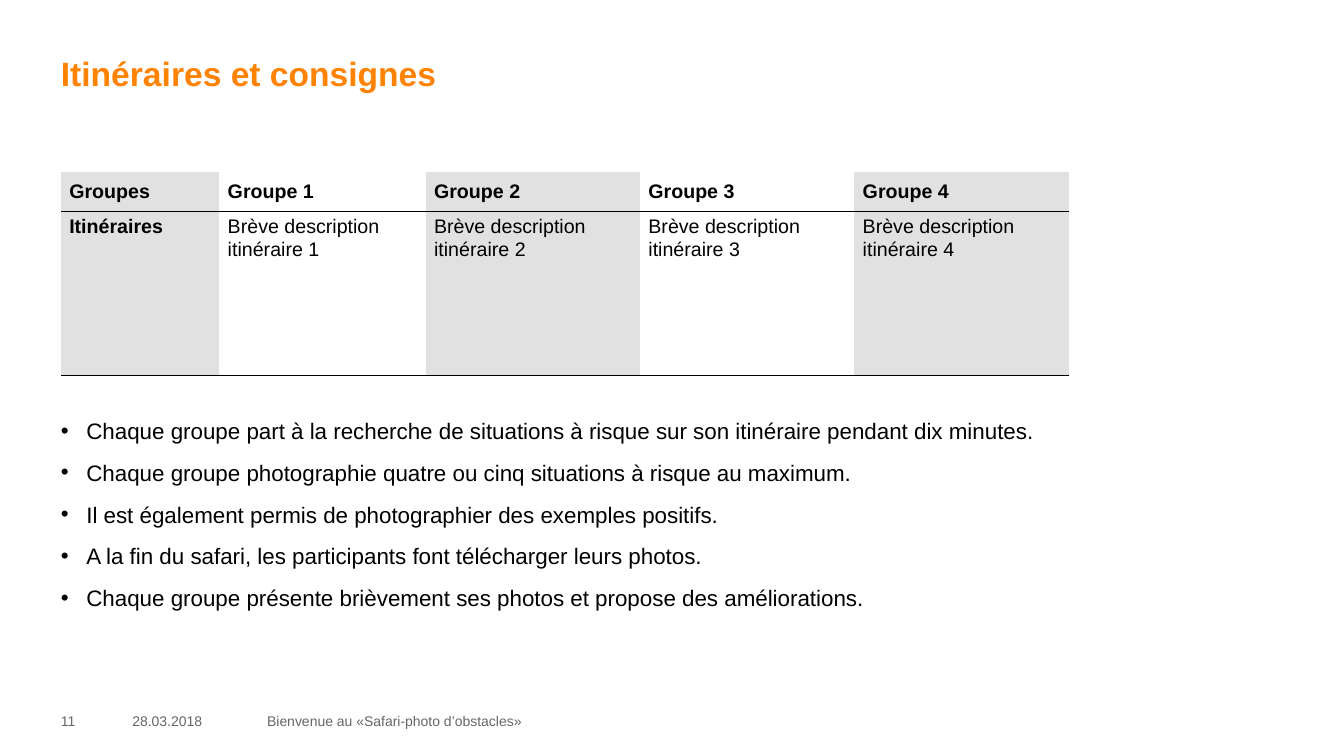
from dataclasses import dataclass

import pptx
import pptx.dml.color
import pptx.enum.text
import pptx.oxml
import pptx.oxml.ns
import pptx.util
from pptx.enum.text import MSO_ANCHOR, MSO_AUTO_SIZE, PP_ALIGN


@dataclass(frozen=True)
class Theme:
    font: str = "Arial"
    accent: str = "FF8200"
    ink: str = "000000"
    muted: str = "666666"
    band: str = "E1E1E1"
    title_size: float = 24
    body_size: float = 16
    table_size: float = 14
    footer_size: float = 10
    rule_width: float = 0.67


@dataclass(frozen=True)
class Area:
    left: float
    top: float
    width: float
    height: float


@dataclass(frozen=True)
class FooterItem:
    text: str
    left: float
    width: float


THEME = Theme()
MARGIN = 43.5
CONTENT_WIDTH = 720

TITLE_AREA = Area(MARGIN, 37.5, 873.5, 67.5)
TABLE_AREA = Area(MARGIN, 122.7, CONTENT_WIDTH, 145.5)
LIST_AREA = Area(MARGIN, 298, CONTENT_WIDTH, 187)
FOOTER_TOP, FOOTER_HEIGHT = 507.6, 14.4

COLUMN_WIDTHS = [113.2, 147.4, 153.1, 153.1, 153.2]
ROW_HEIGHTS = [28.1, 117.4]
GROUPS = range(1, 5)
TABLE_ROWS = [
    ["Groupes"] + [f"Groupe {number}" for number in GROUPS],
    ["Itinéraires"] + [f"Brève description itinéraire {number}" for number in GROUPS],
]

INSTRUCTIONS = [
    "Chaque groupe part à la recherche de situations à risque sur son itinéraire pendant dix minutes.",
    "Chaque groupe photographie quatre ou cinq situations à risque au maximum.",
    "Il est également permis de photographier des exemples positifs.",
    "A la fin du safari, les participants font télécharger leurs photos.",
    "Chaque groupe présente brièvement ses photos et propose des améliorations.",
]
LIST_INDENT = 18.2
LIST_GAP = 10.6

FOOTER_ITEMS = [
    FooterItem("11", MARGIN, 39.6),
    FooterItem("28.03.2018", 94.5, 85),
    FooterItem("Bienvenue au «Safari-photo d’obstacles»", 190.8, 617.8),
]


def place(shape, area: Area) -> None:
    shape.left, shape.top = pptx.util.Pt(area.left), pptx.util.Pt(area.top)
    shape.width, shape.height = pptx.util.Pt(area.width), pptx.util.Pt(area.height)


def prepare_frame(frame, anchor=MSO_ANCHOR.TOP) -> None:
    frame.word_wrap = True
    frame.auto_size = MSO_AUTO_SIZE.NONE
    frame.vertical_anchor = anchor
    frame.margin_left = frame.margin_right = 0
    frame.margin_top = frame.margin_bottom = 0


def write(para, text: str, *, size: float, color: str = THEME.ink, bold: bool = False) -> None:
    para.alignment = PP_ALIGN.LEFT
    span = para.add_run()
    span.text = text
    span.font.name = THEME.font
    span.font.size = pptx.util.Pt(size)
    span.font.bold = bold
    span.font.color.rgb = pptx.dml.color.RGBColor.from_string(color)


def add_text_box(page, area: Area, anchor=MSO_ANCHOR.TOP):
    box = page.shapes.add_textbox(0, 0, 0, 0)
    place(box, area)
    prepare_frame(box.text_frame, anchor)
    return box.text_frame


def add_bullet(para) -> None:
    properties = para._p.get_or_add_pPr()
    indent = int(pptx.util.Pt(LIST_INDENT))
    properties.set("marL", str(indent))
    properties.set("indent", str(-indent))
    namespace = pptx.oxml.ns.nsdecls("a")
    for xml in (
        f'<a:buFont {namespace} typeface="{THEME.font}"/>',
        f'<a:buChar {namespace} char="•"/>',
    ):
        properties.append(pptx.oxml.parse_xml(xml))


def set_borders(cell) -> None:
    """Rule the bottom and inner horizontal edges; clear the others."""
    properties = cell._tc.get_or_add_tcPr()
    is_header = cell._tc.row_idx == 0
    ruled_sides = ("lnB",) if is_header else ("lnT", "lnB")
    rule = f'<a:solidFill><a:srgbClr val="{THEME.ink}"/></a:solidFill>'
    width = int(pptx.util.Pt(THEME.rule_width))
    for side in ("lnL", "lnR", "lnT", "lnB"):
        line = rule if side in ruled_sides else "<a:noFill/>"
        properties.append(pptx.oxml.parse_xml(
            f'<a:{side} {pptx.oxml.ns.nsdecls("a")} w="{width}">{line}</a:{side}>'))


def add_title(page) -> None:
    title = page.shapes.title
    place(title, TITLE_AREA)
    prepare_frame(title.text_frame)
    write(title.text_frame.paragraphs[0], "Itinéraires et consignes",
          size=THEME.title_size, color=THEME.accent, bold=True)


def add_group_table(page) -> None:
    frame = page.shapes.add_table(len(ROW_HEIGHTS), len(COLUMN_WIDTHS), 0, 0, 0, 0)
    place(frame, TABLE_AREA)
    table = frame.table
    table.first_row = table.horz_banding = False
    for column, width in zip(table.columns, COLUMN_WIDTHS):
        column.width = pptx.util.Pt(width)
    for row, height in zip(table.rows, ROW_HEIGHTS):
        row.height = pptx.util.Pt(height)

    for row_index, texts in enumerate(TABLE_ROWS):
        for column_index, text in enumerate(texts):
            cell = table.cell(row_index, column_index)
            is_header = row_index == 0
            cell.vertical_anchor = MSO_ANCHOR.MIDDLE if is_header else MSO_ANCHOR.TOP
            cell.margin_left = cell.margin_right = pptx.util.Pt(6)
            cell.margin_top = cell.margin_bottom = pptx.util.Pt(3.6)
            set_borders(cell)
            if column_index % 2 == 0:
                cell.fill.solid()
                cell.fill.fore_color.rgb = pptx.dml.color.RGBColor.from_string(THEME.band)
            else:
                cell.fill.background()
            write(cell.text_frame.paragraphs[0], text, size=THEME.table_size,
                  bold=is_header or column_index == 0)


def add_instructions(page) -> None:
    frame = add_text_box(page, LIST_AREA)
    for index, text in enumerate(INSTRUCTIONS):
        para = frame.add_paragraph() if index else frame.paragraphs[0]
        add_bullet(para)
        para.space_before = pptx.util.Pt(LIST_GAP if index else 0)
        write(para, text, size=THEME.body_size)


def add_footer(page) -> None:
    for item in FOOTER_ITEMS:
        area = Area(item.left, FOOTER_TOP, item.width, FOOTER_HEIGHT)
        frame = add_text_box(page, area, MSO_ANCHOR.MIDDLE)
        write(frame.paragraphs[0], item.text, size=THEME.footer_size, color=THEME.muted)


def main() -> None:
    deck = pptx.Presentation()
    deck.slide_width, deck.slide_height = pptx.util.Pt(960), pptx.util.Pt(540)
    page = deck.slides.add_slide(deck.slide_layouts.get_by_name("Title Only"))
    add_title(page)
    add_group_table(page)
    add_instructions(page)
    add_footer(page)
    deck.save("out.pptx")


if __name__ == "__main__":
    main()
